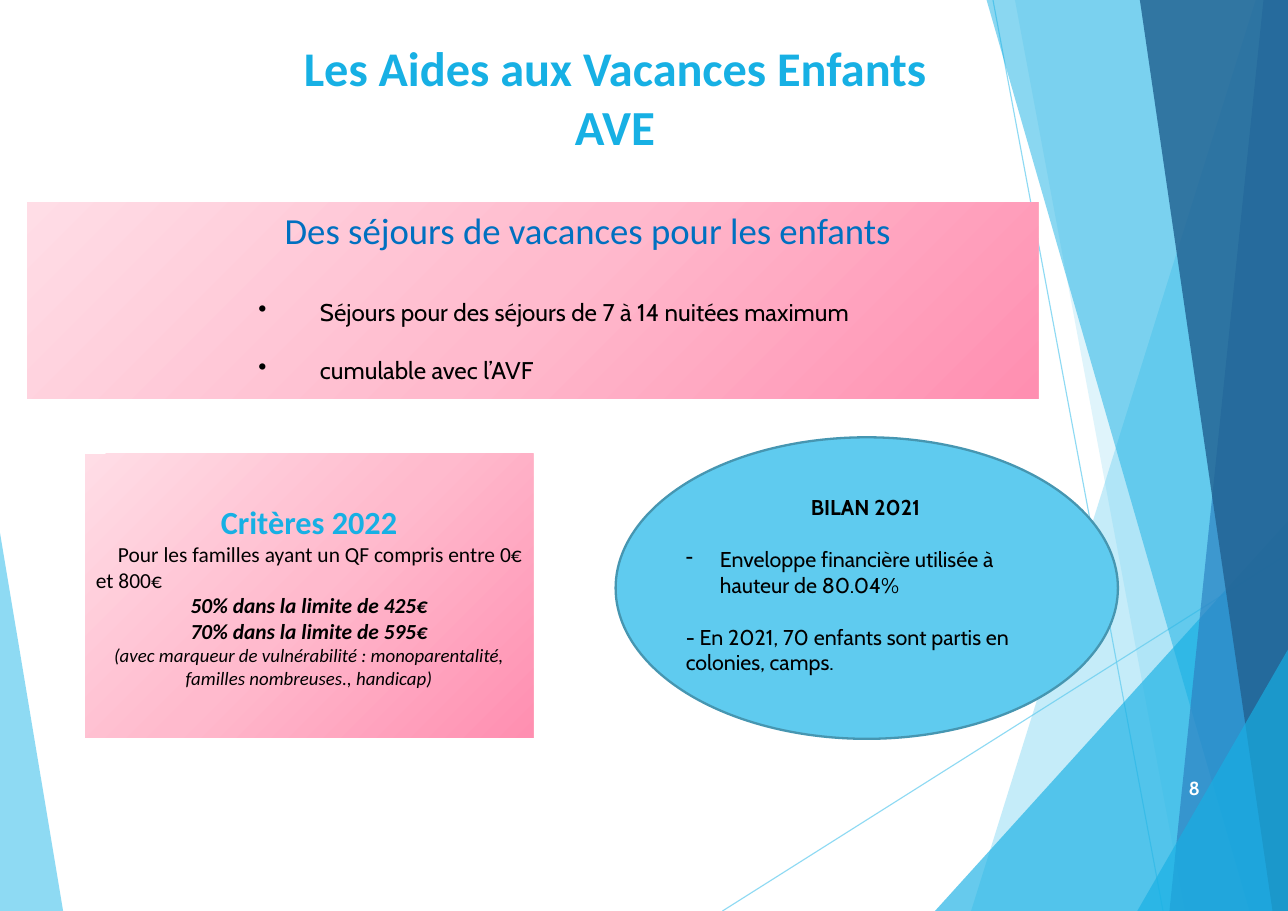
import pptx
import pptx.util
import pptx.dml.color
import pptx.enum.shapes
import pptx.enum.text
import pptx.oxml
import pptx.oxml.ns

qn = pptx.oxml.ns.qn
Pt = pptx.util.Pt
Inches = pptx.util.Inches
ALIGN = pptx.enum.text.PP_ALIGN
ANCHOR = pptx.enum.text.MSO_ANCHOR
SHAPE = pptx.enum.shapes.MSO_SHAPE

prs = pptx.Presentation()
prs.slide_width = Inches(11.69)
prs.slide_height = Inches(8.27)
s = prs.slides.add_slide(prs.slide_layouts[6])
col = prs.slide_width / 100
row = prs.slide_height / 100


def paint(fill, color, alpha=100):
    fill.solid()
    fill.fore_color.rgb = pptx.dml.color.RGBColor.from_string(color)
    if alpha < 100:
        clr = fill._xPr.find(qn("a:solidFill"))[0]
        clr.append(clr.makeelement(qn("a:alpha"), {"val": str(alpha * 1000)}))


def text(tf, content, size, font="Cabin", color="000000", bold=False, italic=False,
         align=ALIGN.LEFT, before=0, left=0, indent=0, bullet=None, join=False):
    tf.word_wrap = True
    p = tf.paragraphs[-1]
    if p.runs and not join:
        p = tf.add_paragraph()
    if not join:
        p.alignment = align
        p.space_before = Pt(before)
        pPr = p._p.get_or_add_pPr()
        pPr.set("marL", str(Inches(left)))
        pPr.set("indent", str(Inches(indent)))
        if bullet:
            pPr.append(pPr.makeelement(qn("a:buChar"), {"char": bullet}))
    r = p.add_run()
    r.text = content
    r.font.name = font
    r.font.size = Pt(size)
    r.font.bold = bold
    r.font.italic = italic
    paint(r.font.fill, color)


for x1, y1, x2, y2 in [(56.1, 100, 100, 60.8), (77.1, 0, 90.3, 100)]:
    sp = s.shapes.add_connector(pptx.enum.shapes.MSO_CONNECTOR.STRAIGHT,
                                int(x1 * col), int(y1 * row), int(x2 * col), int(y2 * row))
    sp.line.width = Pt(0.75)
    paint(sp.line.fill, "5FCBEF", 70)
    spPr = sp._element.spPr
    spPr.append(spPr.makeelement(qn("a:effectLst"), {}))

facets = [
    ("5FCBEF", 70, [(0, 58.5), (4.9, 100), (0, 100)]),
    ("5FCBEF", 36, [(97.5, 0), (75.4, 100), (100, 100), (100, 0)]),
    ("5FCBEF", 20, [(78.8, 0), (92, 100), (100, 100), (100, 0)]),
    ("17B0E4", 66, [(72.6, 100), (100, 57.2), (100, 100)]),
    ("17B0E4", 50, [(76.6, 0), (97, 100), (100, 100), (100, 0)]),
    ("2E83C3", 70, [(98.1, 0), (90.8, 100), (100, 100), (100, 0)]),
    ("226292", 82, [(88.5, 0), (98.8, 100), (100, 100), (100, 0)]),
    ("17B0E4", 66, [(88.3, 100), (100, 71.3), (100, 100)]),
]
for color, alpha, corners in facets:
    points = [(int(x * col), int(y * row)) for x, y in corners]
    fb = s.shapes.build_freeform(*points[0])
    fb.add_line_segments(points[1:], close=True)
    sp = fb.convert_to_shape()
    sp.shadow.inherit = False
    sp.line.fill.background()
    paint(sp.fill, color, alpha)

panels = {}
for name, kind, x, y, w, h in [
    ("banner", SHAPE.RECTANGLE, 2.1, 22.2, 78.5, 21.6),
    ("criteria", SHAPE.RECTANGLE, 6.6, 49.8, 34.8, 31.2),
    ("results", SHAPE.OVAL, 47.8, 48, 39, 33.1),
]:
    sp = s.shapes.add_shape(kind, int(x * col), int(y * row), int(w * col), int(h * row))
    sp.shadow.inherit = False
    panels[name] = sp

stops = "".join(f'<a:gs pos="{pos * 1000}"><a:srgbClr val="{color}"/></a:gs>'
                for pos, color in [(0, "FF8FB1"), (50, "FFBACD"), (100, "FFDDE6")])
for name in ("banner", "criteria"):
    sp = panels[name]
    sp.line.fill.background()
    sp.fill.background()
    spPr = sp._element.spPr
    spPr.replace(spPr.find(qn("a:noFill")), pptx.oxml.parse_xml(
        f'<a:gradFill {pptx.oxml.ns.nsdecls("a")} rotWithShape="1"><a:gsLst>{stops}</a:gsLst>'
        '<a:path path="circle"><a:fillToRect l="100000" t="100000"/></a:path></a:gradFill>'))

paint(panels["results"].fill, "5FCBEF")
paint(panels["results"].line.fill, "4696B1")
panels["results"].line.width = Pt(1.5)

frames = {}
for name, x, y, w, h in [
    ("banner", 2.1, 22.2, 78.5, 21.6),
    ("title", 21.2, 3.6, 53.1, 20.6),
    ("number", 71.5, 84.4, 22.5, 4.2),
    ("results", 52.4, 53.7, 29.6, 24.1),
]:
    sp = s.shapes.add_textbox(int(x * col), int(y * row), int(w * col), int(h * row))
    frames[name] = sp.text_frame

tf = frames["banner"]
text(tf, "Des séjours de vacances pour les enfants", 24, "Calibri", "0070C0",
     align=ALIGN.CENTER, left=1)
for item, before in [("Séjours pour des séjours de 7 à 14 nuitées maximum", 29.6),
                     ("cumulable avec l’AVF", 19.2)]:
    text(tf, item, 15.8, before=before, left=2.56, indent=-0.56, bullet="•")

tf = frames["title"]
text(tf, "Les Aides aux Vacances Enfants ", 31.6, "Calibri", "17B0E4", True, align=ALIGN.CENTER)
text(tf, "AVE", 32, "Calibri", "17B0E4", True, join=True)

tf = frames["number"]
tf.vertical_anchor = ANCHOR.MIDDLE
text(tf, "8", 12.3, color="FFFFFF", bold=True, align=ALIGN.RIGHT)

tf = panels["criteria"].text_frame
tf.vertical_anchor = ANCHOR.MIDDLE
text(tf, "Critères 2022", 21.1, "Calibri", "17B0E4", True, align=ALIGN.CENTER)
text(tf, "Pour les familles ayant un QF compris entre 0€ et 800€", 14, "Calibri",
     align=ALIGN.JUSTIFY, indent=0.2)
for line in ["50% dans la limite de 425€", "70% dans la limite de 595€"]:
    text(tf, line, 14, "Calibri", bold=True, italic=True, align=ALIGN.CENTER)
text(tf, "(avec marqueur de vulnérabilité : monoparentalité, familles nombreuses., handicap)",
     12.3, "Calibri", italic=True, align=ALIGN.CENTER)

tf = frames["results"]
text(tf, "BILAN 2021", 14, bold=True, align=ALIGN.CENTER)
text(tf, "Enveloppe financière utilisée à hauteur de 80.04%", 14,
     before=17, left=0.31, indent=-0.31, bullet="-")
text(tf, "- En 2021, 70 enfants sont partis en colonies, camps.", 14, before=17)

prs.save("out.pptx")
